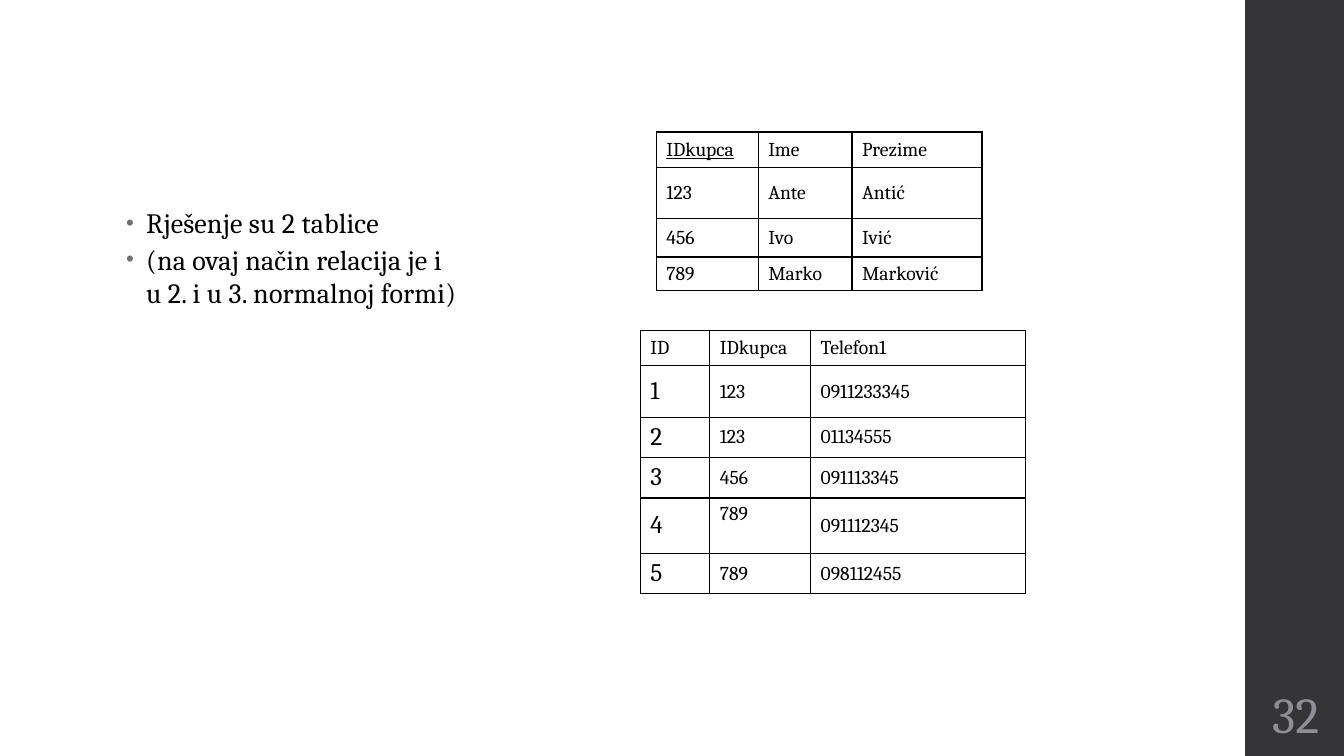
from pptx import Presentation
from pptx.dml.color import RGBColor
from pptx.enum.shapes import MSO_SHAPE
from pptx.enum.text import MSO_ANCHOR as Anchor, PP_ALIGN as Align
from pptx.oxml import parse_xml
from pptx.oxml.ns import nsdecls
from pptx.util import Inches, Pt

BLACK = RGBColor(0x00, 0x00, 0x00)
DARK = RGBColor(0x35, 0x35, 0x37)
GRAY = RGBColor(0x8E, 0x8E, 0x94)


def style(para, size, color=BLACK):
    para.font.name = "Cambria"
    para.font.size = Pt(size)
    para.font.color.rgb = color


def border(cell):
    props = cell._tc.get_or_add_tcPr()
    for side in ("lnL", "lnR", "lnT", "lnB"):
        props.append(parse_xml(
            f'<a:{side} {nsdecls("a")} w="12700"><a:solidFill>'
            f'<a:srgbClr val="{BLACK}"/></a:solidFill></a:{side}>'))


deck = Presentation()
deck.slide_width = Inches(13.33)
deck.slide_height = Inches(7.5)
slide = deck.slides.add_slide(deck.slide_layouts[1])
shapes = slide.shapes
title = shapes.title
title._element.getparent().remove(title._element)

# Side bar
bar = shapes.add_shape(MSO_SHAPE.RECTANGLE, Inches(12.35), 0, Inches(1), Inches(7.5))
bar.shadow.inherit = False
bar.fill.solid()
bar.fill.fore_color.rgb = DARK
bar.line.fill.background()

# Bullet list
body = slide.placeholders[1]
body.left, body.top = Inches(1.15), Inches(1.99)
body.width, body.height = Inches(3.54), Inches(4.76)
frame = body.text_frame
frame.margin_right = Inches(0.12)
frame.vertical_anchor = Anchor.TOP
frame.text = ("Rješenje su 2 tablice\n"
              "(na ovaj način relacija je i u 2. i u 3. normalnoj formi)")
for para in frame.paragraphs:
    para.space_before = Pt(0)
    para.space_after = Pt(2)
    props = para._p.get_or_add_pPr()
    props.set("marL", str(Inches(0.2)))
    props.set("indent", str(Inches(-0.2)))
    for tag in ('buClr {}><a:srgbClr val="6F6F74"/></a:buClr>',
                'buSzPct {} val="80000"/>',
                'buFont {} typeface="Arial"/>',
                'buChar {} char="•"/>'):
        props.append(parse_xml("<a:" + tag.format(nsdecls("a"))))
    style(para, 20)
    para.runs[0]._r.get_or_add_rPr().set("spc", "10")

# Slide number
box = shapes.add_textbox(Inches(12.35), Inches(6.75), Inches(1), Inches(0.65))
frame = box.text_frame
frame.word_wrap = True
frame.vertical_anchor = Anchor.MIDDLE
frame.margin_left = frame.margin_right = Inches(0.05)
frame.text = "32"
para = frame.paragraphs[0]
para.alignment = Align.CENTER
style(para, 36, GRAY)

# Tables: left, top, column widths, row heights, first column size, rows
buyers = [
    ("IDkupca", "Ime", "Prezime"),
    ("123", "Ante", "Antić"),
    ("456", "Ivo", "Ivić"),
    ("789", "Marko", "Marković"),
]
phones = [
    ("ID", "IDkupca", "Telefon1"),
    ("1", "123", "0911233345"),
    ("2", "123", "01134555"),
    ("3", "456", "091113345"),
    ("4", "789", "091112345"),
    ("5", "789", "098112455"),
]
tables = []
for left, top, wide, high, size, rows in (
    (6.51, 1.31, (1.01, 0.93, 1.29), (0.35, 0.51, 0.38, 0.33), 14, buyers),
    (6.35, 3.28, (0.69, 1, 2.13), (0.35, 0.51, 0.39, 0.39, 0.55, 0.38), 18, phones),
):
    table = shapes.add_table(len(rows), len(wide), Inches(left), Inches(top),
                             Inches(sum(wide)), Inches(sum(high))).table
    table.first_row = table.horz_banding = False
    for col, width in zip(table.columns, wide):
        col.width = Inches(width)
    for r, row in enumerate(rows):
        table.rows[r].height = Inches(high[r])
        for c, text in enumerate(row):
            cell = table.cell(r, c)
            cell.text = text
            cell.vertical_anchor = Anchor.MIDDLE
            border(cell)
            cell.fill.background()
            style(cell.text_frame.paragraphs[0], size if r and c == 0 else 14)
    tables.append(table)

# Key column underlined, one phone row set to the top
tables[0].cell(0, 0).text_frame.paragraphs[0].font.underline = True
tables[1].cell(4, 1).vertical_anchor = Anchor.TOP

deck.save("out.pptx")
